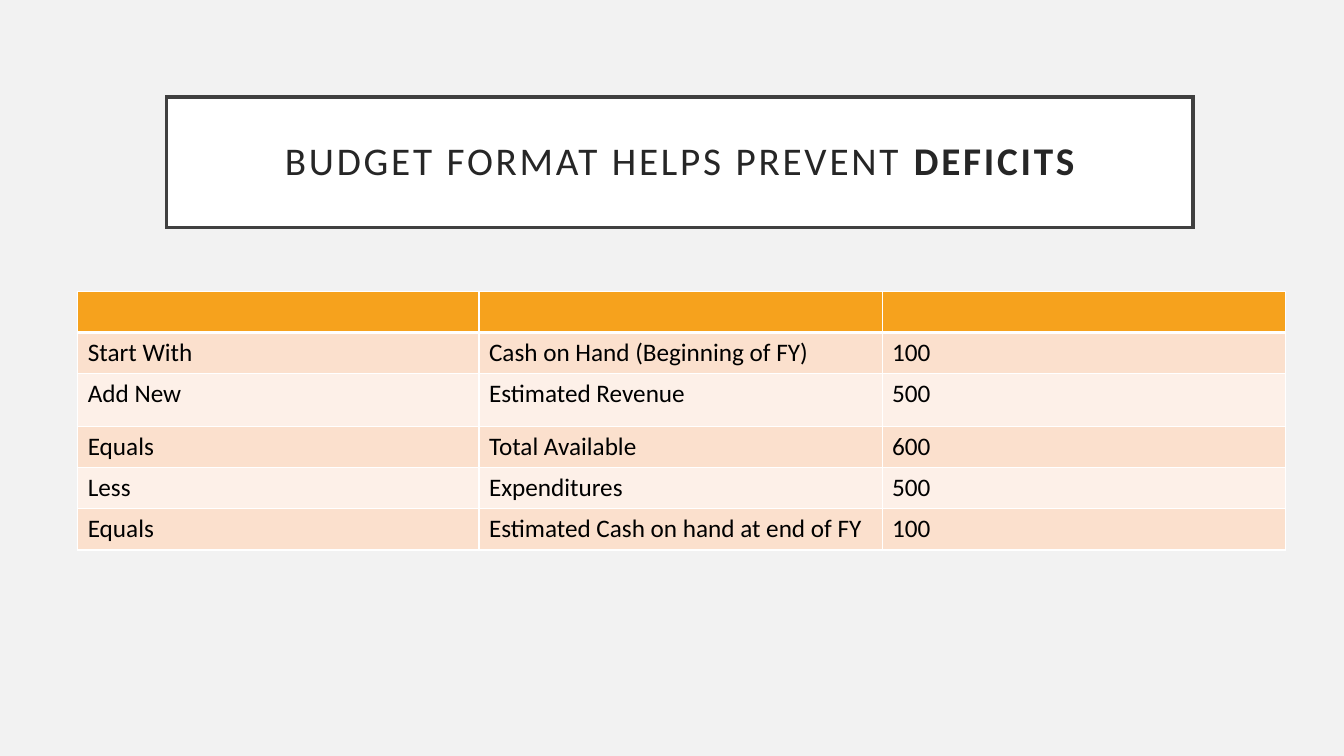
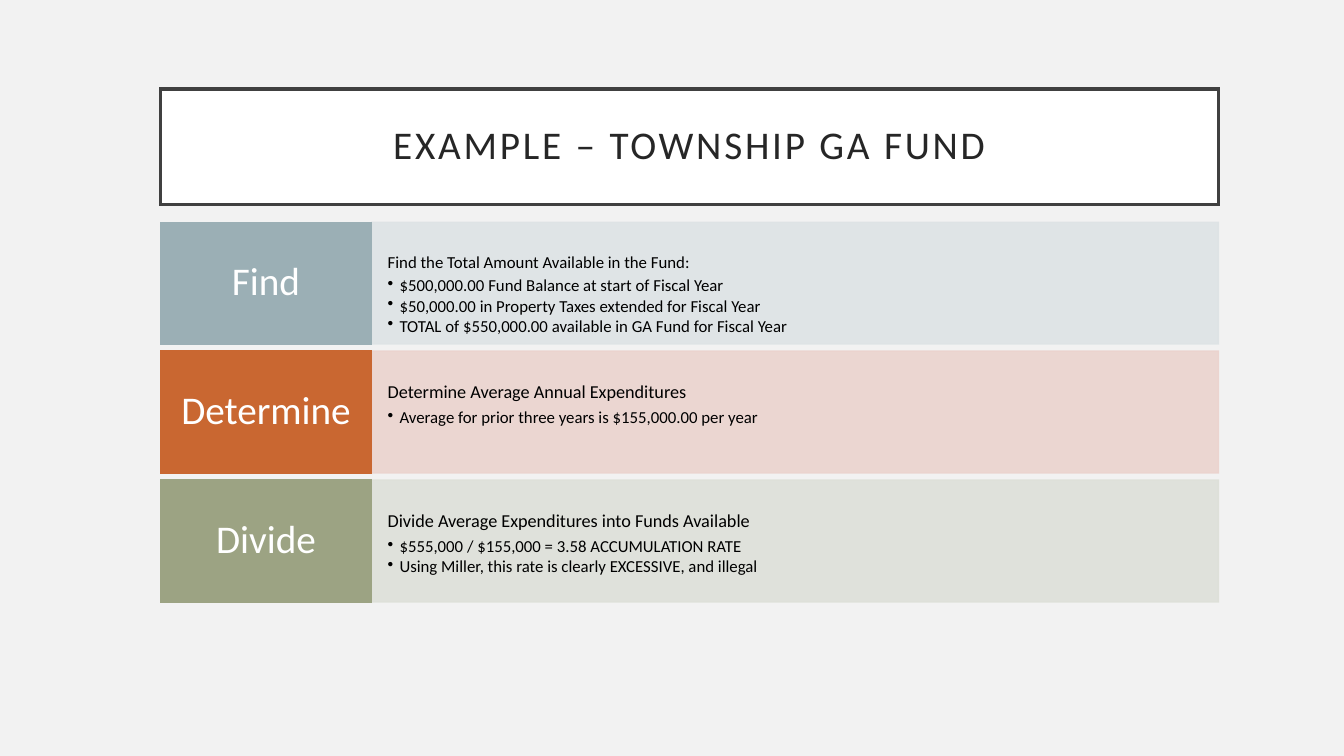
from dataclasses import dataclass

from lxml.etree import SubElement
from pptx import Presentation
from pptx.dml.color import RGBColor
from pptx.enum.shapes import MSO_SHAPE as Shape
from pptx.enum.text import MSO_ANCHOR as Anchor, MSO_AUTO_SIZE as AutoSize, PP_ALIGN as Align
from pptx.oxml.ns import qn
from pptx.util import Cm, Pt

FONT = "Calibri"
COLORS = {
    "page": "F2F2F2", "white": "FFFFFF", "black": "000000",
    "frame": "404040", "title": "262626",
    "header": "F6A21D", "band_dark": "FBE0CD", "band_light": "FDF0E8",
    "blue": "9BAFB5", "blue_pale": "DEE3E5",
    "rust": "C96731", "rust_pale": "EBD3CE",
    "green": "9CA383", "green_pale": "DEE0D9",
}


@dataclass(frozen=True)
class Area:
    left: float
    top: float
    width: float
    height: float

    def lengths(self) -> tuple:
        return Cm(self.left), Cm(self.top), Cm(self.width), Cm(self.height)


@dataclass(frozen=True)
class Step:
    label: str
    color: str
    heading: str
    heading_size: int
    bullets: tuple


BUDGET_ROWS = (
    ("", "", ""),
    ("Start With", "Cash on Hand (Beginning of FY)", "100"),
    ("Add New", "Estimated Revenue", "500"),
    ("Equals", "Total Available", "600"),
    ("Less", "Expenditures", "500"),
    ("Equals", "Estimated Cash on hand at end of FY", "100"),
)
COLUMN_WIDTHS = (10.11, 10.16, 10.16)
ROW_HEIGHTS = (1.04, 1.04, 1.32, 1.04, 1.04, 1.04)

STEPS = (
    Step("Find", "blue", "Find the Total Amount Available in the Fund:", 12, (
        "$500,000.00 Fund Balance at start of Fiscal Year",
        "$50,000.00 in Property Taxes extended for Fiscal Year",
        "TOTAL of $550,000.00 available in GA Fund for Fiscal Year",
    )),
    Step("Determine", "rust", "Determine Average Annual Expenditures", 13, (
        "Average for prior three years is $155,000.00 per year",
    )),
    Step("Divide", "green", "Divide Average Expenditures into Funds Available", 13, (
        "$555,000 / $155,000 = 3.58 ACCUMULATION RATE",
        "Using Miller, this rate is clearly EXCESSIVE, and illegal",
    )),
)
STEPS_LEFT, STEPS_TOP, STEP_PITCH, STEP_HEIGHT = 4.04, 5.6, 3.25, 3.07
LABEL_WIDTH, DETAIL_WIDTH = 5.33, 21.34


def rgb(name: str) -> RGBColor:
    return RGBColor.from_string(COLORS[name])


def paint(shape, fill: str, line: str, width: float) -> None:
    shape.fill.solid()
    shape.fill.fore_color.rgb = rgb(fill)
    shape.line.color.rgb = rgb(line)
    shape.line.width = Pt(width)
    SubElement(shape.line._ln, qn("a:miter"), lim="800000")


def make_translucent(shape, percent: int) -> None:
    for color in shape._element.spPr.iter(qn("a:srgbClr")):
        SubElement(color, qn("a:alpha"), val=str(percent * 1000))


def set_frame(frame, anchor: Anchor, side: float, top: float, bottom: float) -> None:
    frame.word_wrap = True
    frame.auto_size = AutoSize.NONE
    frame.vertical_anchor = anchor
    frame.margin_left = frame.margin_right = Cm(side)
    frame.margin_top, frame.margin_bottom = Cm(top), Cm(bottom)


def style_paragraph(para, size: int, color: str, align: Align = Align.LEFT,
                    after: float = 0) -> None:
    para.alignment = align
    para.line_spacing = 0.9
    para.space_before = Pt(0)
    para.space_after = Pt(after)
    para.font.name = FONT
    para.font.size = Pt(size)
    para.font.color.rgb = rgb(color)


def add_titled_page(deck, area: Area, text: str, strong: str = ""):
    page = deck.slides.add_slide(deck.slide_layouts.get_by_name("Title Only"))
    title = page.shapes.title
    title.left, title.top, title.width, title.height = area.lengths()
    paint(title, "white", "frame", 2.5)
    set_frame(title.text_frame, Anchor.MIDDLE, 0.5, 0.5, 0.5)
    para = title.text_frame.paragraphs[0]
    style_paragraph(para, 28, "title", Align.CENTER)
    for words, bold in ((text, False), (strong, True)):
        if words:
            span = para.add_run()
            span.text = words
            span.font.bold = bold
            span.font._element.set("spc", "200")
    return page


def set_borders(cell, top: float, bottom: float) -> None:
    properties = cell._tc.get_or_add_tcPr()
    for side, width in (("L", 1), ("R", 1), ("T", top), ("B", bottom)):
        border = SubElement(properties, qn(f"a:ln{side}"), w=str(Pt(width)))
        fill = SubElement(border, qn("a:solidFill"))
        SubElement(fill, qn("a:srgbClr"), val=COLORS["white"])


def add_budget_table(page) -> None:
    area = Area(1.96, 7.34, sum(COLUMN_WIDTHS), sum(ROW_HEIGHTS))
    table = page.shapes.add_table(
        len(BUDGET_ROWS), len(COLUMN_WIDTHS), *area.lengths()).table
    table.horz_banding = False
    for column, width in zip(table.columns, COLUMN_WIDTHS):
        column.width = Cm(width)
    for index, (row, height, texts) in enumerate(zip(table.rows, ROW_HEIGHTS, BUDGET_ROWS)):
        row.height = Cm(height)
        band = "header" if index == 0 else "band_dark" if index % 2 else "band_light"
        for cell, text in zip(row.cells, texts):
            set_borders(cell, 3 if index == 1 else 1, 3 if index == 0 else 1)
            cell.fill.solid()
            cell.fill.fore_color.rgb = rgb(band)
            cell.text = text
            para = cell.text_frame.paragraphs[0]
            para.font.name = FONT
            para.font.size = Pt(18)
            para.font.color.rgb = rgb("black")


def add_box(page, area: Area, color: str):
    box = page.shapes.add_shape(Shape.RECTANGLE, *area.lengths())
    box.shadow.inherit = False
    paint(box, color, color, 1)
    return box


def add_bullet(frame, text: str) -> None:
    para = frame.add_paragraph()
    para.text = text
    para.level = 1
    style_paragraph(para, 12, "black", after=1.5)
    properties = para._p.get_or_add_pPr()
    properties.set("marL", str(Cm(0.3)))
    properties.set("indent", str(-Cm(0.3)))
    SubElement(properties, qn("a:buChar"), char="•")


def add_step(page, step: Step, top: float) -> None:
    detail = add_box(
        page, Area(STEPS_LEFT + LABEL_WIDTH, top, DETAIL_WIDTH, STEP_HEIGHT),
        f"{step.color}_pale")
    make_translucent(detail, 90)
    frame = detail.text_frame
    set_frame(frame, Anchor.TOP, 0.4, 0.79, 0)
    heading = frame.paragraphs[0]
    heading.text = step.heading
    style_paragraph(heading, step.heading_size, "black", after=round(step.heading_size * 0.35))
    for bullet in step.bullets:
        add_bullet(frame, bullet)

    label = add_box(page, Area(STEPS_LEFT, top, LABEL_WIDTH, STEP_HEIGHT), step.color)
    set_frame(label.text_frame, Anchor.MIDDLE, 0.28, 0.3, 0.3)
    para = label.text_frame.paragraphs[0]
    para.text = step.label
    style_paragraph(para, 28, "white", Align.CENTER)


def main() -> None:
    deck = Presentation()
    deck.slide_width, deck.slide_height = Cm(33.87), Cm(19.05)
    background = deck.slide_master.background.fill
    background.solid()
    background.fore_color.rgb = rgb("page")

    budget = add_titled_page(
        deck, Area(4.19, 2.44, 25.88, 3.3), "BUDGET FORMAT HELPS PREVENT ", "DEFICITS")
    add_budget_table(budget)

    example = add_titled_page(
        deck, Area(STEPS_LEFT, 2.24, LABEL_WIDTH + DETAIL_WIDTH, 2.92),
        "EXAMPLE – TOWNSHIP GA FUND")
    for index, step in enumerate(STEPS):
        add_step(example, step, STEPS_TOP + index * STEP_PITCH)

    deck.save("out.pptx")


if __name__ == "__main__":
    main()
